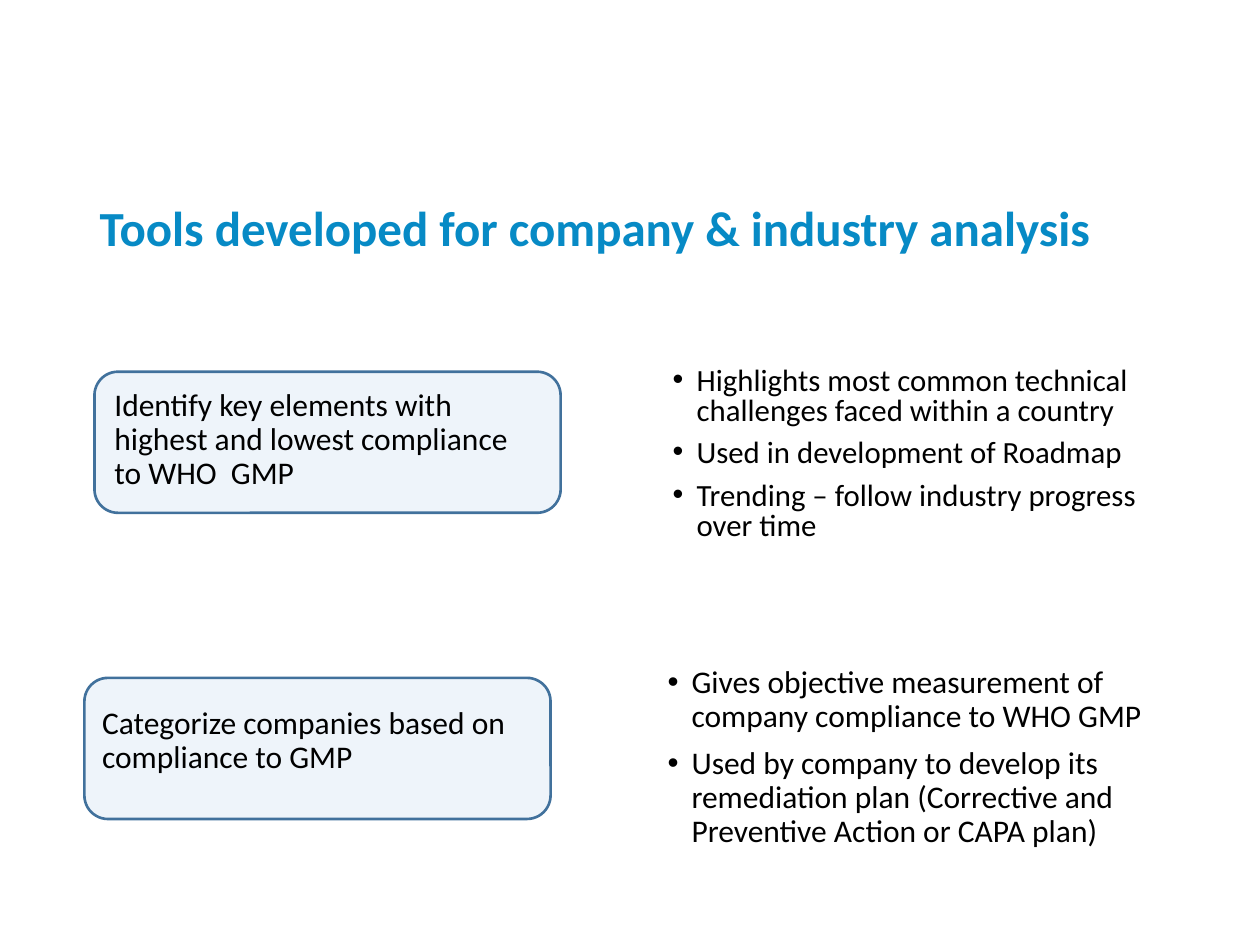
from lxml.etree import SubElement
from pptx import Presentation
from pptx.dml.color import RGBColor
from pptx.enum.shapes import MSO_SHAPE
from pptx.enum.text import MSO_ANCHOR, MSO_AUTO_SIZE, PP_ALIGN
from pptx.oxml.ns import qn
from pptx.util import Inches, Pt

TITLE_BLUE = RGBColor(0x07, 0x8A, 0xC5)
CARD_BLUE = RGBColor(0x5B, 0x9B, 0xD5)
BORDER_BLUE = RGBColor(0x41, 0x71, 0x9C)
BLACK = RGBColor(0, 0, 0)
CARD_OPACITY = 10
CARD_SIZE = (3.7, 1.12)
BULLET_INDENT = 0.19

TITLE = "Tools developed for company & industry analysis"
TITLE_BOX = (0.69, 1.23, 8.64, 1.2)

TOOLS = [
    {
        "card": (0.75, 2.95),
        "label": "Identify key elements with highest and lowest compliance to WHO  GMP",
        "label_box": (0.81, 3.04, 3.57, 1.11),
        "label_in_body": False,
        "benefits": [
            "Highlights most common technical challenges faced within a country",
            "Used in development of Roadmap",
            "Trending – follow industry progress over time",
        ],
        "benefits_box": (5.24, 2.87, 4.33, 1.59),
        "benefits_size": 17.6,
        "benefits_spacing": 0.8,
    },
    {
        "card": (0.67, 5.38),
        "label": "Categorize companies based on compliance to GMP",
        "label_box": (0.71, 5.56, 3.67, 1.1),
        "label_in_body": True,
        "benefits": [
            "Gives objective measurement of company compliance to WHO GMP",
            "Used by company to develop its remediation plan "
            "(Corrective and Preventive Action or CAPA plan)",
        ],
        "benefits_box": (5.2, 5.24, 4.52, 1.74),
        "benefits_size": 18,
        "benefits_spacing": 0.9,
    },
]


def place(shape, box):
    shape.left, shape.top, shape.width, shape.height = map(Inches, box)


def set_bullet(paragraph, bulleted):
    properties = paragraph._p.get_or_add_pPr()
    indent = Inches(BULLET_INDENT) if bulleted else 0
    properties.set("marL", str(indent))
    properties.set("indent", str(-indent))
    if bulleted:
        SubElement(properties, qn("a:buFont")).set("typeface", "Arial")
        SubElement(properties, qn("a:buChar")).set("char", "•")
    else:
        SubElement(properties, qn("a:buNone"))


def write(shape, texts, size, spacing=0.9, color=BLACK, bold=False, bulleted=False):
    frame = shape.text_frame
    frame.word_wrap = True
    frame.auto_size = MSO_AUTO_SIZE.NONE
    for index, text in enumerate(texts):
        paragraph = frame.add_paragraph() if index else frame.paragraphs[0]
        paragraph.text = text
        set_bullet(paragraph, bulleted)
        paragraph.alignment = PP_ALIGN.LEFT
        paragraph.line_spacing = spacing
        paragraph.space_before = Pt(7.5 if index else 0)
        paragraph.font.name = "Calibri"
        paragraph.font.size = Pt(size)
        paragraph.font.bold = bold
        paragraph.font.color.rgb = color


def add_card(slide, position):
    box = map(Inches, position + CARD_SIZE)
    card = slide.shapes.add_shape(MSO_SHAPE.ROUNDED_RECTANGLE, *box)
    card.shadow.inherit = False
    card.fill.solid()
    card.fill.fore_color.rgb = CARD_BLUE
    fill_color = card._element.spPr.find(qn("a:solidFill"))[0]
    SubElement(fill_color, qn("a:alpha")).set("val", str(CARD_OPACITY * 1000))
    card.line.color.rgb = BORDER_BLUE
    card.line.width = Pt(1.5)
    slide.shapes._spTree.insert(2, card._element)


def add_text_box(slide, box):
    return slide.shapes.add_textbox(*map(Inches, box))


def main():
    presentation = Presentation()
    presentation.slide_width = Inches(10)
    presentation.slide_height = Inches(7.5)
    slide = presentation.slides.add_slide(presentation.slide_layouts[1])

    title = slide.shapes.title
    place(title, TITLE_BOX)
    write(title, [TITLE], 28, color=TITLE_BLUE, bold=True)
    title.text_frame.vertical_anchor = MSO_ANCHOR.MIDDLE

    for tool in TOOLS:
        add_card(slide, tool["card"])
        if tool["label_in_body"]:
            label = slide.placeholders[1]
            place(label, tool["label_box"])
        else:
            label = add_text_box(slide, tool["label_box"])
        write(label, [tool["label"]], 18)
        benefits = add_text_box(slide, tool["benefits_box"])
        write(benefits, tool["benefits"], tool["benefits_size"],
              tool["benefits_spacing"], bulleted=True)

    presentation.save("out.pptx")


if __name__ == "__main__":
    main()
